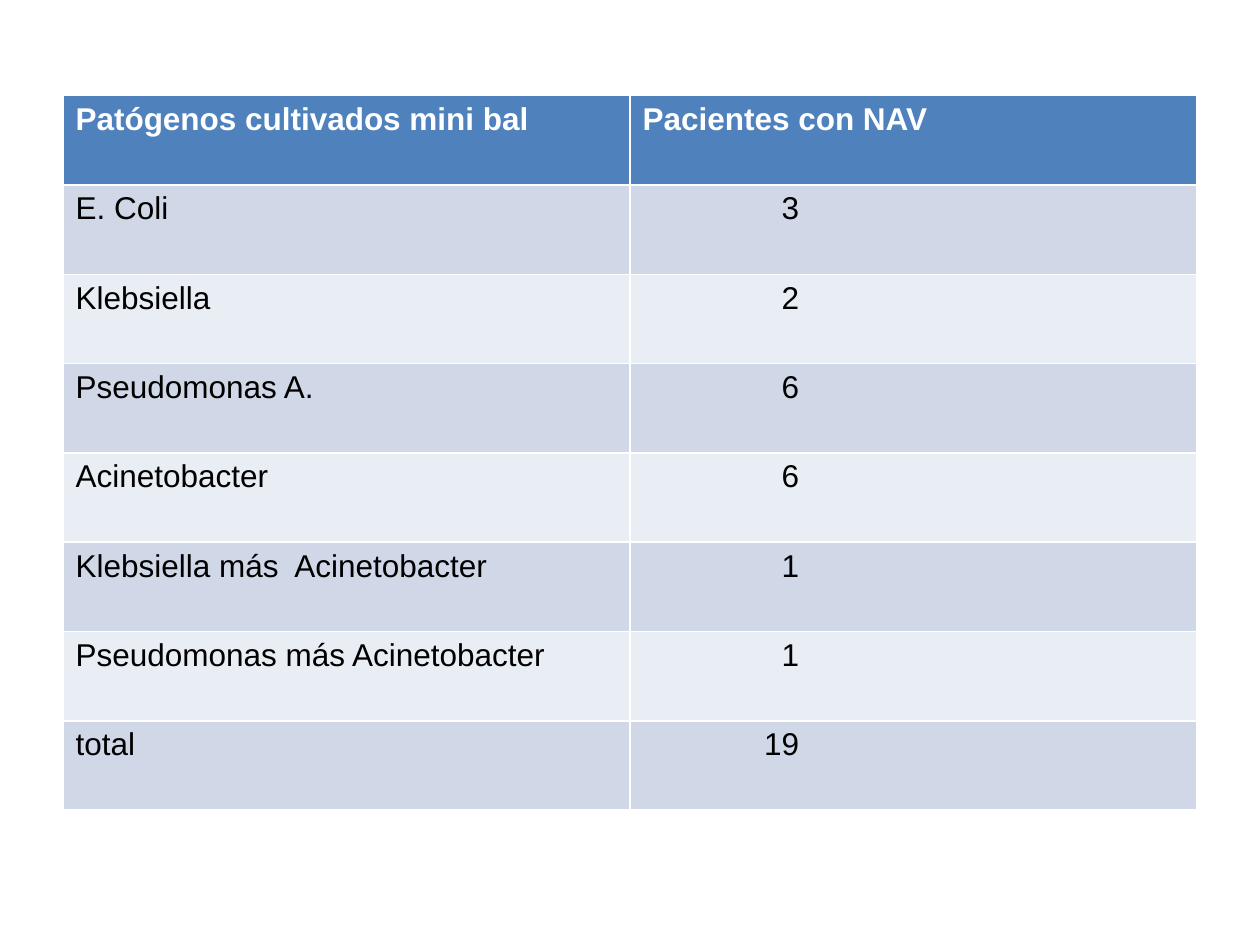
import pptx
import pptx.dml.color
import pptx.enum.text
import pptx.util
from pptx.util import Cm

HEADER_FILL = "4F81BD"
BAND_FILLS = ("D0D8E8", "E9EDF4")
NUMBER_MARGIN = Cm(8.02)

ROWS = [
    ("Patógenos cultivados mini bal", "Pacientes con NAV"),
    ("E. Coli", "3"),
    ("Klebsiella", "2"),
    ("Pseudomonas A.", "6"),
    ("Acinetobacter", "6"),
    ("Klebsiella más  Acinetobacter", "1"),
    ("Pseudomonas más Acinetobacter", "1"),
    ("total", "19"),
]


def color(value):
    return pptx.dml.color.RGBColor.from_string(value)


class SlideBuilder:
    font_name = "Arial"
    font_size = pptx.util.Pt(18)

    def __init__(self, slide):
        self.slide = slide

    def add_table(self, rows, left, top, width, height):
        shape = self.slide.shapes.add_table(
            len(rows), len(rows[0]), left, top, width, height
        )
        for row_index, row in enumerate(rows):
            is_header = row_index == 0
            fill = HEADER_FILL if is_header else BAND_FILLS[(row_index - 1) % 2]
            for column_index, text in enumerate(row):
                cell = shape.table.cell(row_index, column_index)
                self.format_cell(cell, text, fill, is_header)
                if column_index == 1 and not is_header:
                    cell.margin_right = NUMBER_MARGIN
                    paragraph = cell.text_frame.paragraphs[0]
                    paragraph.alignment = pptx.enum.text.PP_ALIGN.RIGHT

    def format_cell(self, cell, text, fill, is_header):
        cell.fill.solid()
        cell.fill.fore_color.rgb = color(fill)
        cell.text_frame.text = text
        font = cell.text_frame.paragraphs[0].runs[0].font
        font.name = self.font_name
        font.size = self.font_size
        font.bold = is_header
        font.color.rgb = color("FFFFFF" if is_header else "000000")


def main():
    presentation = pptx.Presentation()
    presentation.slide_width = Cm(25.4)
    presentation.slide_height = Cm(19.05)
    slide = presentation.slides.add_slide(presentation.slide_layouts[6])
    builder = SlideBuilder(slide)
    builder.add_table(ROWS, Cm(1.27), Cm(1.93), Cm(22.86), Cm(14.4))
    presentation.save("out.pptx")


if __name__ == "__main__":
    main()
